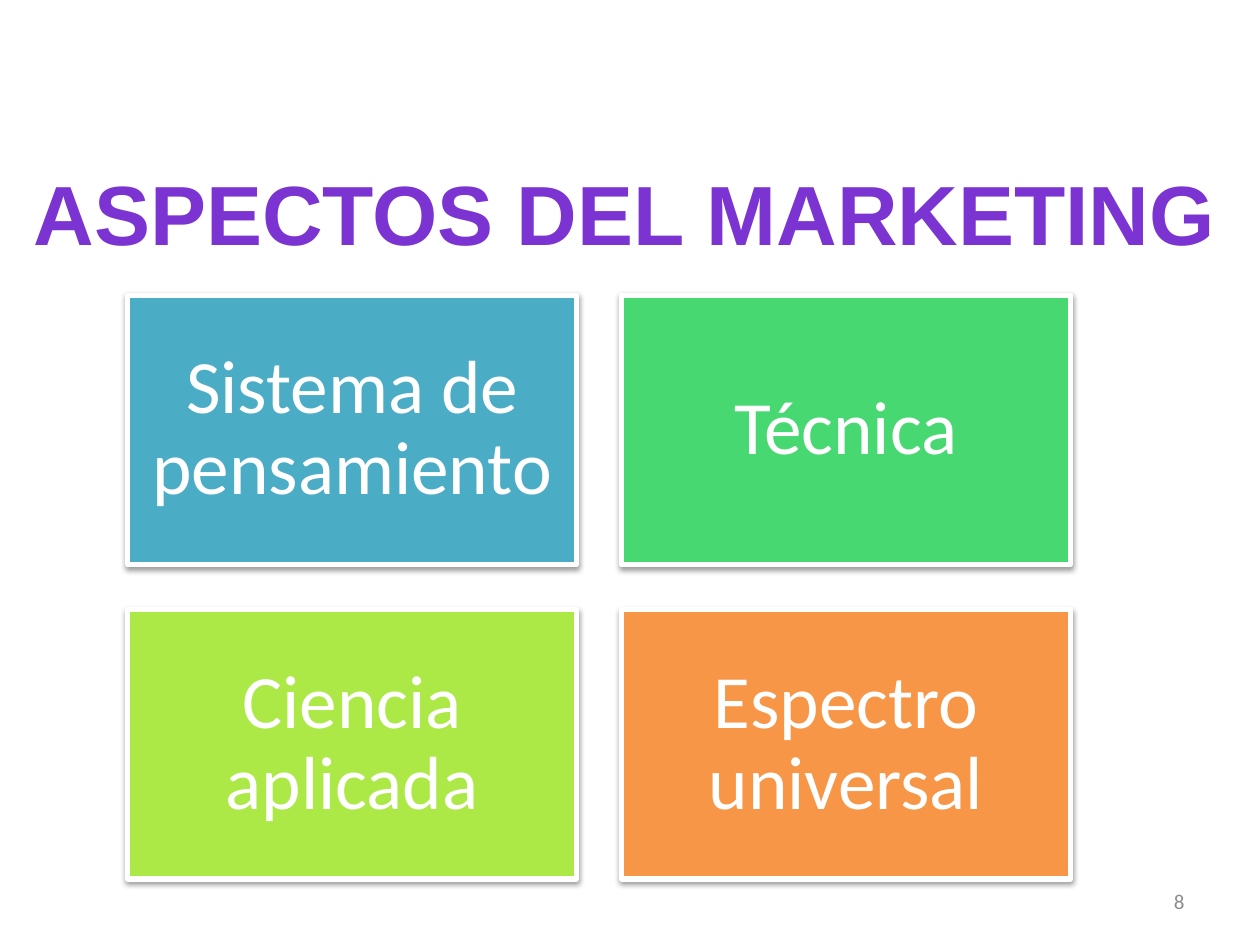
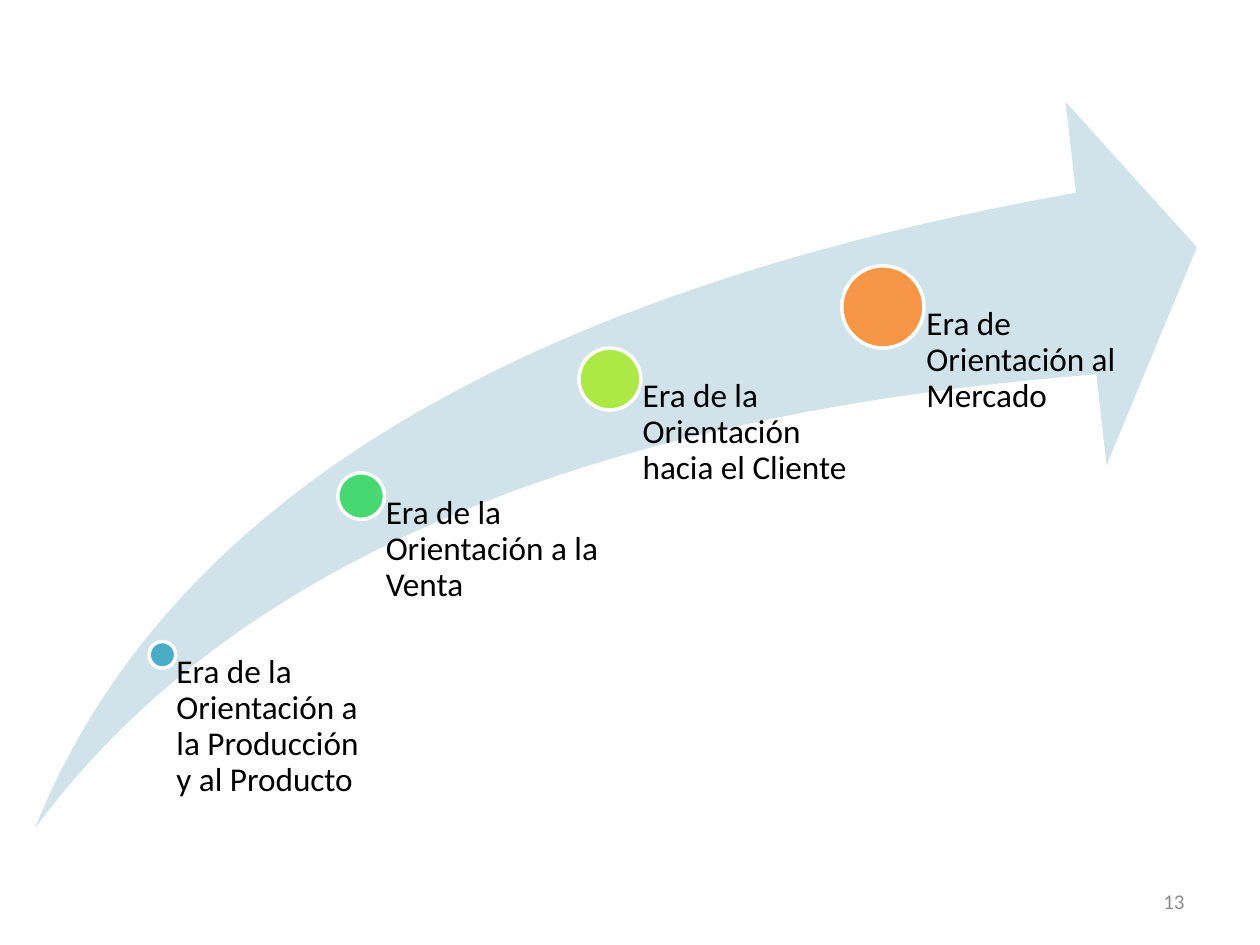
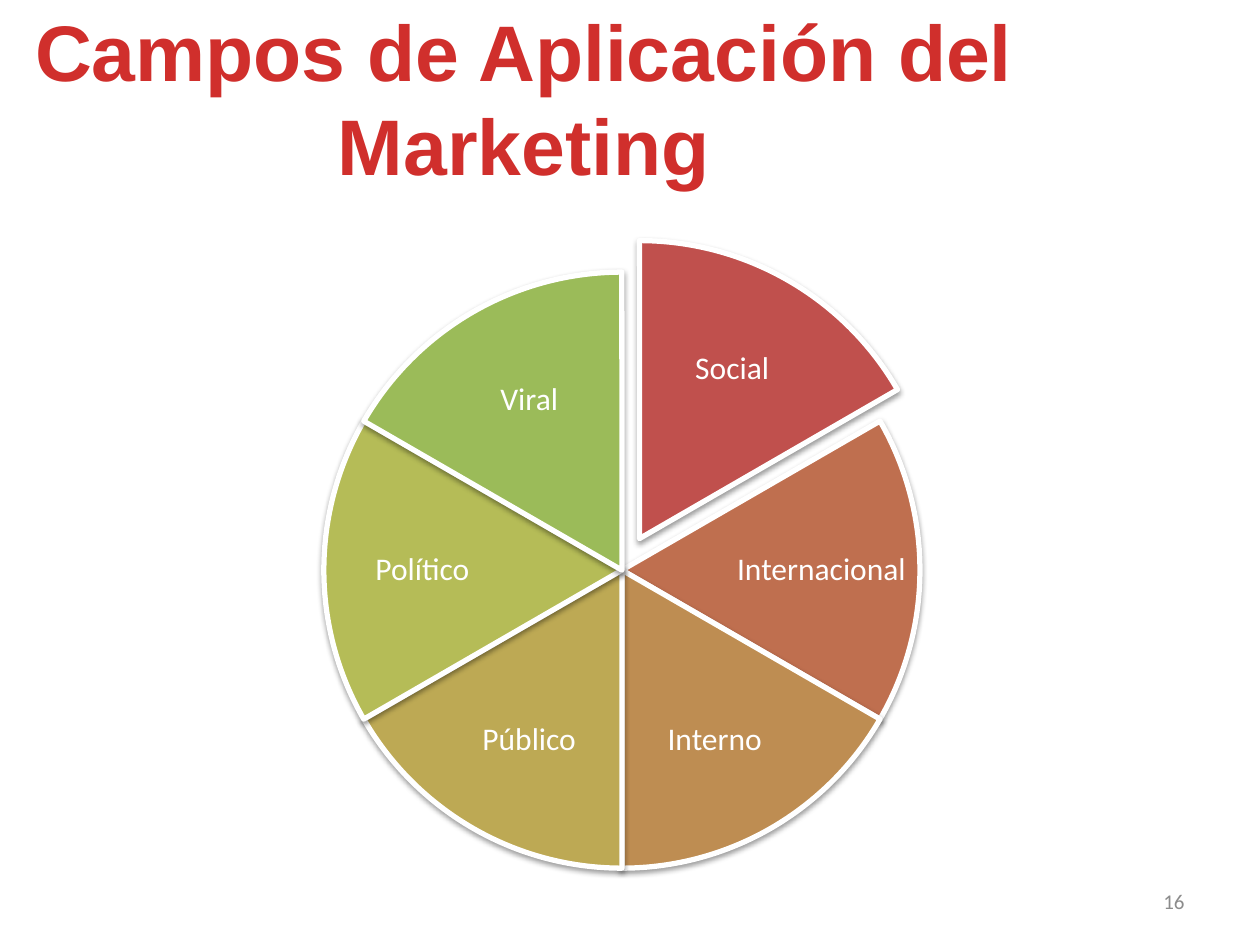
from lxml.etree import SubElement
from pptx import Presentation
from pptx.dml.color import RGBColor
from pptx.enum.shapes import MSO_SHAPE
from pptx.enum.text import MSO_ANCHOR, PP_ALIGN
from pptx.oxml.ns import qn
from pptx.util import Pt

WHITE = RGBColor(0xFF, 0xFF, 0xFF)
BLACK = RGBColor(0, 0, 0)
GRAY = RGBColor(0x8C, 0x8C, 0x8C)
PURPLE = RGBColor(0x7B, 0x34, 0xD2)
RED = RGBColor(0xD0, 0x2F, 0x2C)
PALE = RGBColor(0xD0, 0xE3, 0xEA)
BLUE = RGBColor(0x4B, 0xAC, 0xC6)
GREEN = RGBColor(0x47, 0xD8, 0x72)
LIME = RGBColor(0xAC, 0xE9, 0x46)
ORANGE = RGBColor(0xF7, 0x96, 0x46)
ROSE = RGBColor(0xC0, 0x50, 0x4D)
RUST = RGBColor(0xBF, 0x6F, 0x4F)
TAN = RGBColor(0xBE, 0x8D, 0x52)
GOLD = RGBColor(0xBD, 0xA9, 0x54)
OLIVE = RGBColor(0xB5, 0xBC, 0x57)
MOSS = RGBColor(0x9B, 0xBB, 0x59)
ACCENTS = (BLUE, GREEN, LIME, ORANGE)


def write(shape, text, size, color, font="Calibri", bold=False, wrap=True,
          align=PP_ALIGN.CENTER, anchor=MSO_ANCHOR.MIDDLE,
          inset=(7.2, 3.6, 7.2, 3.6), leading=1.0):
    frame = shape.text_frame
    frame.word_wrap = wrap
    frame.vertical_anchor = anchor
    frame.margin_left, frame.margin_top, frame.margin_right, frame.margin_bottom = map(Pt, inset)
    line = frame.paragraphs[0]
    line.text = text
    line.alignment = align
    line.line_spacing = leading
    line.font.name = font
    line.font.size = Pt(size)
    line.font.bold = bold
    line.font.color.rgb = color


def draw(slide, kind, box, fill, edge=0, shade=False):
    shape = slide.shapes.add_shape(kind, *map(Pt, box))
    shape.fill.solid()
    shape.fill.fore_color.rgb = fill
    if edge:
        shape.line.color.rgb = WHITE
        shape.line.width = Pt(edge)
    else:
        shape.line.fill.background()
    shape.shadow.inherit = False
    if shade:
        effects = shape.element.spPr.find(qn("a:effectLst"))
        outer = SubElement(effects, qn("a:outerShdw"), blurRad=str(Pt(3.1)),
                           dist=str(Pt(1.6)), dir="5400000", rotWithShape="0")
        tint = SubElement(outer, qn("a:srgbClr"), val="000000")
        SubElement(tint, qn("a:alpha"), val="38000")
    return shape


deck = Presentation()
deck.slide_width = Pt(720)
deck.slide_height = Pt(540)
slides = []
for number in ("8", "13", "16"):
    slide = deck.slides.add_slide(deck.slide_layouts[6])
    box = slide.shapes.add_textbox(Pt(516), Pt(500.5), Pt(168), Pt(28.75))
    write(box, number, size=12, color=GRAY, align=PP_ALIGN.RIGHT)
    slides.append(slide)
traits, eras, fields = slides

title = traits.shapes.add_textbox(Pt(8.6), Pt(88.6), Pt(697), Pt(65.5))
write(title, "ASPECTOS DEL MARKETING", size=48, color=PURPLE, font="Arial",
      bold=True, wrap=False, anchor=MSO_ANCHOR.TOP)
names = ("Sistema de pensamiento", "Técnica", "Ciencia aplicada", "Espectro universal")
for index, (name, fill) in enumerate(zip(names, ACCENTS)):
    row, col = divmod(index, 2)
    tile = draw(traits, MSO_SHAPE.RECTANGLE,
                (72.9 + 282.2 * col, 168.7 + 179.8 * row, 256.5, 153.9),
                fill, edge=3, shade=True)
    write(tile, name, size=43, color=WHITE, inset=(13, 13, 13, 13), leading=0.9)

draw(eras, MSO_SHAPE.SWOOSH_ARROW, (20, 58.3, 664, 415), PALE)
steps = (
    ("Era de la Orientación a la Producción y al Producto", 92.8, 374.2, 15.2, 113.6),
    ("Era de la Orientación a la Venta", 206.4, 283.5, 26.6, 139.5),
    ("Era de la Orientación hacia el Cliente", 348.5, 216.6, 35.4, 139.5),
    ("Era de Orientación al Mercado", 504.5, 175.4, 47, 139.5),
)
for (text, x, y, size, width), fill in zip(steps, ACCENTS):
    draw(eras, MSO_SHAPE.OVAL, (x - size / 2, y - size / 2, size, size), fill, edge=2)
    label = eras.shapes.add_textbox(Pt(x), Pt(y), Pt(width), Pt(473.3 - y))
    write(label, text, size=19, color=BLACK, align=PP_ALIGN.LEFT,
          anchor=MSO_ANCHOR.TOP, inset=(size * 0.53, 0, 0, 0), leading=0.9)

title = fields.shapes.add_textbox(Pt(-48.2), Pt(-2.2), Pt(695), Pt(116.6))
write(title, "Campos de Aplicación del Marketing", size=45, color=RED, font="Arial",
      bold=True, anchor=MSO_ANCHOR.TOP)
wedges = (
    ("Social", ROSE, 53, -97),
    ("Internacional", RUST, 114, 0),
    ("Interno", TAN, 53, 97),
    ("Público", GOLD, -53, 97),
    ("Político", OLIVE, -114, 0),
    ("Viral", MOSS, -53, -97),
)
SPAN = 340.6
for index, (name, fill, right, down) in enumerate(wedges):
    x, y = (355.4, 325.8) if index else (365.4, 307.8)
    wedge = draw(fields, MSO_SHAPE.PIE, (x - SPAN / 2, y - SPAN / 2, SPAN, SPAN),
                 fill, edge=3, shade=True)
    start = (162 + 36 * index) % 216
    wedge.adjustments[0] = start
    wedge.adjustments[1] = (start + 36) % 216
    width, height = (99.4, 72.7) if down else (103, 69)
    label = fields.shapes.add_textbox(Pt(x + right - width / 2), Pt(y + down - height / 2),
                                      Pt(width), Pt(height))
    write(label, name, size=18, color=WHITE, inset=(2.2, 2.2, 2.2, 2.2), leading=0.9)

deck.save("out.pptx")
